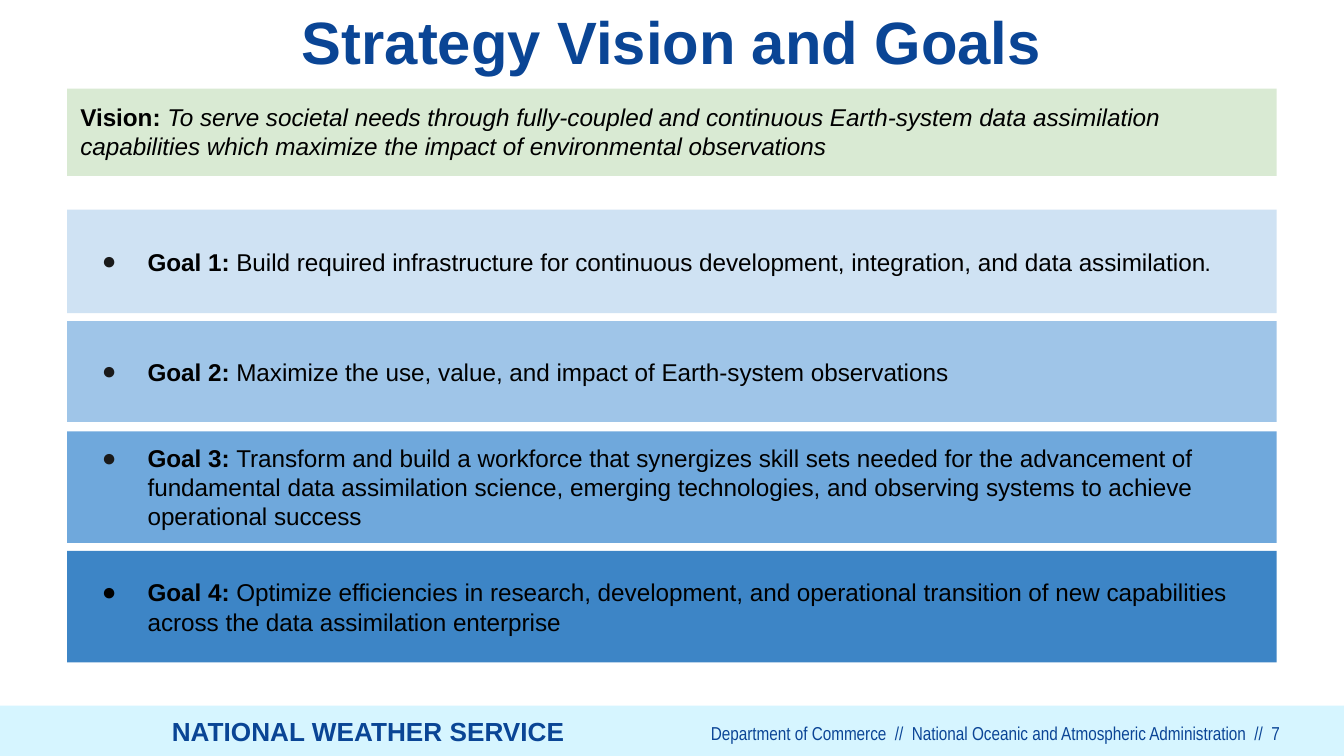
from lxml import etree
from pptx import Presentation
from pptx.dml.color import RGBColor
from pptx.enum import shapes, text
from pptx.oxml.ns import qn
from pptx.util import Inches, Pt

WIDTH = 10
HEIGHT = WIDTH * 9 / 16
NAVY = "0A4595"
BLACK = "000000"


def rect(s, x, y, w, h, color):
    sp = s.shapes.add_shape(shapes.MSO_SHAPE.RECTANGLE,
                            Inches(x), Inches(y), Inches(w), Inches(h))
    sp.shadow.inherit = False
    sp.fill.solid()
    sp.fill.fore_color.rgb = RGBColor.from_string(color)
    sp.line.fill.background()
    return sp


def write(sp, runs, color, inset=(0.1, 0.1), align=text.PP_ALIGN.LEFT,
          anchor=text.MSO_ANCHOR.TOP, font="Arial"):
    """Fill a shape with one paragraph of (text, size, bold, italic) runs.

    inset is (horizontal, vertical) in inches.
    """
    tf = sp.text_frame
    tf.word_wrap = True
    tf.vertical_anchor = anchor
    tf.margin_left = tf.margin_right = Inches(inset[0])
    tf.margin_top = tf.margin_bottom = Inches(inset[1])
    p = tf.paragraphs[0]
    p.alignment = align
    for words, size, bold, italic in runs:
        r = p.add_run()
        r.text = words
        r.font.name = font
        r.font.size = Pt(size)
        r.font.bold = bold
        r.font.italic = italic
        r.font.color.rgb = RGBColor.from_string(color)
    return p


prs = Presentation()
prs.slide_width = Inches(WIDTH)
prs.slide_height = Inches(HEIGHT)
s = prs.slides.add_slide(prs.slide_layouts[6])

# Footer band
rect(s, 0, 5.25, WIDTH, HEIGHT - 5.25, "D6F5FF")
agency = s.shapes.add_textbox(Inches(1.18), Inches(5.22), Inches(3.98), Inches(0.4))
write(agency, [("NATIONAL WEATHER SERVICE", 14, True, False)], NAVY)
department = s.shapes.add_textbox(Inches(1.6), Inches(5.37), Inches(7.92), Inches(0.13))
write(department,
      [("Department of Commerce  //  National Oceanic and Atmospheric "
        "Administration  //  7", 10, False, False)],
      "0B4596", inset=(0, 0), align=text.PP_ALIGN.RIGHT, font="Arial Narrow")

# Title
title = s.shapes.add_textbox(Inches(0.5), Inches(0.05), Inches(9), Inches(0.65))
p = write(title, [("Strategy Vision and Goals", 32, True, False)], NAVY,
          inset=(0, 0.05), align=text.PP_ALIGN.CENTER)
p.line_spacing = 0.9

# Vision
vision = rect(s, 0.5, 0.66, 9, 0.65, "D9EAD3")
write(vision,
      [("Vision: ", 13, True, False),
       ("To serve societal needs through fully-coupled and continuous Earth-system "
        "data assimilation capabilities which maximize the impact of environmental "
        "observations", 13, False, True)], BLACK)

# Goals: top, height, fill, bullet colour, wording
goals = [
    (1.56, 0.77, "CFE2F3", "1A1A1A",
     "Build required infrastructure for continuous development, integration, "
     "and data assimilation."),
    (2.39, 0.75, "9FC5E8", "1A1A1A",
     "Maximize the use, value, and impact of Earth-system observations"),
    (3.21, 0.83, "6FA8DC", "1A1A1A",
     "Transform and build a workforce that synergizes skill sets needed for the "
     "advancement of fundamental data assimilation science, emerging technologies, "
     "and observing systems to achieve operational success"),
    (4.1, 0.83, "3D85C6", BLACK,
     "Optimize efficiencies in research, development, and operational transition "
     "of new capabilities across the data assimilation enterprise"),
]
for number, (top, height, fill, bullet, wording) in enumerate(goals, 1):
    sp = rect(s, 0.5, top, 9, height, fill)
    runs = [(f"Goal {number}: ", 13, True, False),
            (wording.rstrip("."), 13, False, False)]
    if wording.endswith("."):
        runs.append((".", 12, False, False))
    p = write(sp, runs, BLACK, anchor=text.MSO_ANCHOR.MIDDLE)
    pPr = p._p.get_or_add_pPr()
    pPr.set("marL", str(Inches(0.5)))
    pPr.set("indent", str(Inches(-0.34)))
    bu_color = etree.SubElement(pPr, qn("a:buClr"))
    etree.SubElement(bu_color, qn("a:srgbClr"), val=bullet)
    etree.SubElement(pPr, qn("a:buFont"), typeface="Arial")
    etree.SubElement(pPr, qn("a:buChar"), char="●")

prs.save("out.pptx")
